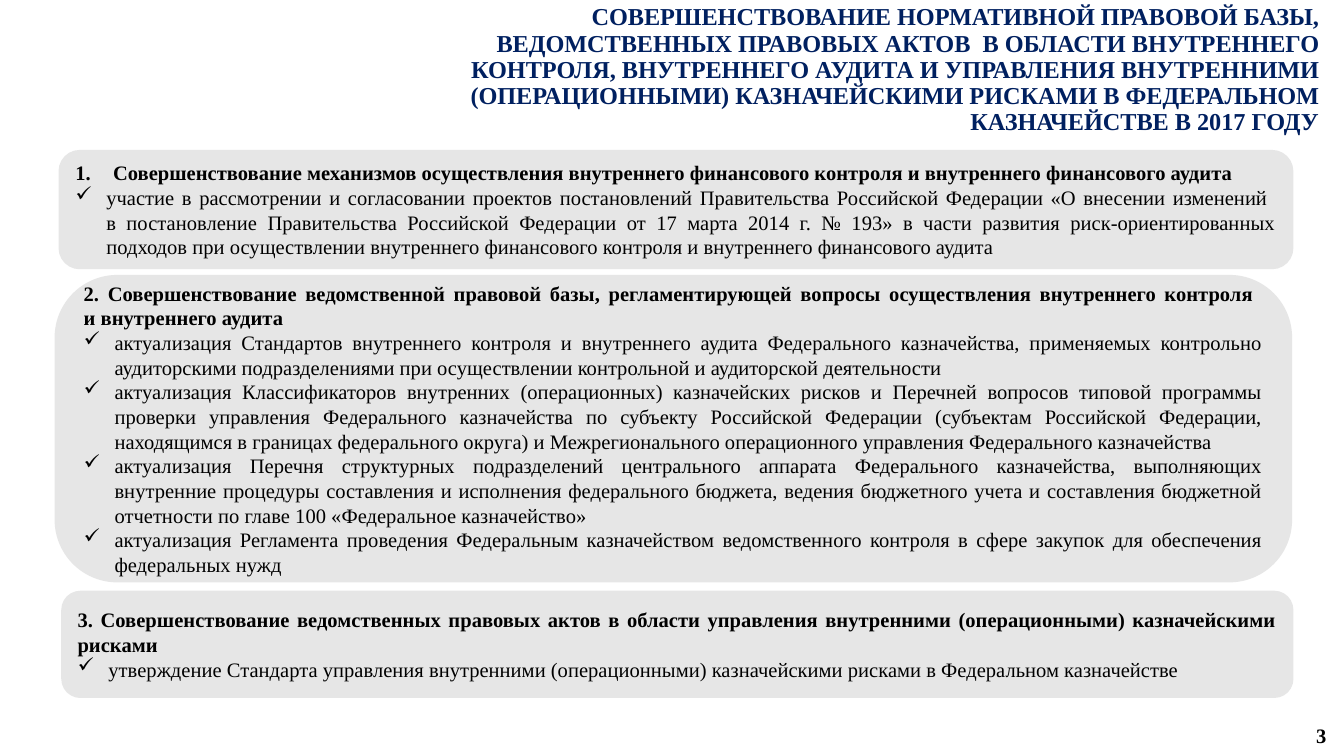
from pptx import Presentation
from pptx.dml.color import RGBColor
from pptx.enum.shapes import MSO_SHAPE
from pptx.enum.text import MSO_ANCHOR, PP_ALIGN
from pptx.oxml.ns import qn
from pptx.util import Inches, Pt
from lxml.etree import SubElement

COLORS = {"title": "002060", "text": "000000", "panel": "E6E6E6"}
FONT = "Times New Roman"
TITLE_SIZE = 13
BODY_SIZE = 11

TITLE = (
    "СОВЕРШЕНСТВОВАНИЕ НОРМАТИВНОЙ ПРАВОВОЙ БАЗЫ, ВЕДОМСТВЕННЫХ ПРАВОВЫХ АКТОВ  "
    "В ОБЛАСТИ ВНУТРЕННЕГО КОНТРОЛЯ, ВНУТРЕННЕГО АУДИТА И УПРАВЛЕНИЯ ВНУТРЕННИМИ "
    "(ОПЕРАЦИОННЫМИ) КАЗНАЧЕЙСКИМИ РИСКАМИ В ФЕДЕРАЛЬНОМ КАЗНАЧЕЙСТВЕ В 2017 ГОДУ"
)

PANELS = [
    {
        "box": (0.45, 1.13, 9.16, 0.86),
        "numbered": True,
        "heading": "Совершенствование механизмов осуществления внутреннего финансового "
                   "контроля и внутреннего финансового аудита",
        "items": [
            "участие в рассмотрении и согласовании проектов постановлений Правительства "
            "Российской Федерации «О внесении изменений \n"
            "в постановление Правительства Российской Федерации от 17 марта 2014 г. № 193» "
            "в части развития риск-ориентированных подходов при осуществлении внутреннего "
            "финансового контроля и внутреннего финансового аудита",
        ],
    },
    {
        "box": (0.42, 2.06, 9.18, 2.26),
        "rounding": 0.2,
        "heading": "2. Совершенствование ведомственной правовой базы, регламентирующей "
                   "вопросы осуществления внутреннего контроля \nи внутреннего аудита",
        "items": [
            "актуализация Стандартов внутреннего контроля и внутреннего аудита Федерального "
            "казначейства, применяемых контрольно аудиторскими подразделениями при "
            "осуществлении контрольной и аудиторской деятельности",
            "актуализация Классификаторов внутренних (операционных) казначейских рисков и "
            "Перечней вопросов типовой программы проверки управления Федерального "
            "казначейства по субъекту Российской Федерации (субъектам Российской Федерации, "
            "находящимся в границах федерального округа) и Межрегионального операционного "
            "управления Федерального казначейства",
            "актуализация Перечня структурных подразделений центрального аппарата "
            "Федерального казначейства, выполняющих внутренние процедуры составления и "
            "исполнения федерального бюджета, ведения бюджетного учета и составления "
            "бюджетной отчетности по главе 100 «Федеральное казначейство»",
            "актуализация Регламента проведения Федеральным казначейством ведомственного "
            "контроля в сфере закупок для обеспечения федеральных нужд",
        ],
    },
    {
        "box": (0.47, 4.41, 9.14, 0.77),
        "heading": "3. Совершенствование ведомственных правовых актов в области управления "
                   "внутренними (операционными) казначейскими рисками",
        "items": [
            "утверждение Стандарта управления внутренними (операционными) казначейскими "
            "рисками в Федеральном казначействе",
        ],
    },
]


def color(name):
    return RGBColor.from_string(COLORS[name])


def set_frame(frame, side, bottom=0.04):
    frame.word_wrap = True
    frame.vertical_anchor = MSO_ANCHOR.MIDDLE
    frame.margin_left = frame.margin_right = Inches(side)
    frame.margin_top = Inches(0.04)
    frame.margin_bottom = Inches(bottom)


def write(para, text, size, align, bold=False, ink="text"):
    para.text = text
    para.alignment = align
    para.font.size = Pt(size)
    for span in para.runs:
        span.font.name = FONT
        span.font.size = Pt(size)
        span.font.bold = bold
        span.font.color.rgb = color(ink)


def set_indent(para, indent):
    props = para._p.get_or_add_pPr()
    props.set("marL", str(Inches(indent)))
    props.set("indent", str(-Inches(indent)))
    return props


def add_number(para):
    SubElement(set_indent(para, 0.28), qn("a:buAutoNum"), type="arabicPeriod")


def add_check(para):
    props = set_indent(para, 0.23)
    SubElement(props, qn("a:buFont"), typeface="Wingdings", charset="2")
    SubElement(props, qn("a:buChar"), char="ü")


def add_label(page, box, text, size, ink="text", bottom=0.04):
    label = page.shapes.add_textbox(*map(Inches, box))
    set_frame(label.text_frame, 0.09, bottom)
    para = label.text_frame.paragraphs[0]
    write(para, text, size, PP_ALIGN.RIGHT, True, ink)
    return para


def add_panel(page, box, heading, items, numbered=False, rounding=None):
    panel = page.shapes.add_shape(MSO_SHAPE.ROUNDED_RECTANGLE, *map(Inches, box))
    panel.shadow.inherit = False
    panel.fill.solid()
    panel.fill.fore_color.rgb = color("panel")
    panel.line.color.rgb = color("panel")
    panel.line.width = Pt(2)
    if rounding:
        panel.adjustments[0] = rounding
    frame = panel.text_frame
    set_frame(frame, 0.07)
    title = frame.paragraphs[0]
    if numbered:
        add_number(title)
    write(title, heading, BODY_SIZE, PP_ALIGN.JUSTIFY, bold=True)
    for item in items:
        para = frame.add_paragraph()
        add_check(para)
        write(para, item, BODY_SIZE, PP_ALIGN.JUSTIFY)


def main():
    deck = Presentation()
    deck.slide_width = Inches(10)
    deck.slide_height = deck.slide_width * 9 // 16
    page = deck.slides.add_slide(deck.slide_layouts[6])
    title = add_label(page, (2.87, 0.27, 7.03, 0.71), TITLE, TITLE_SIZE, "title", bottom=0.24)
    title.line_spacing = 0.9
    add_label(page, (7.63, 5.32, 2.33, 0.3), "3", BODY_SIZE)
    for panel in PANELS:
        add_panel(page, **panel)
    deck.save("out.pptx")


if __name__ == "__main__":
    main()
